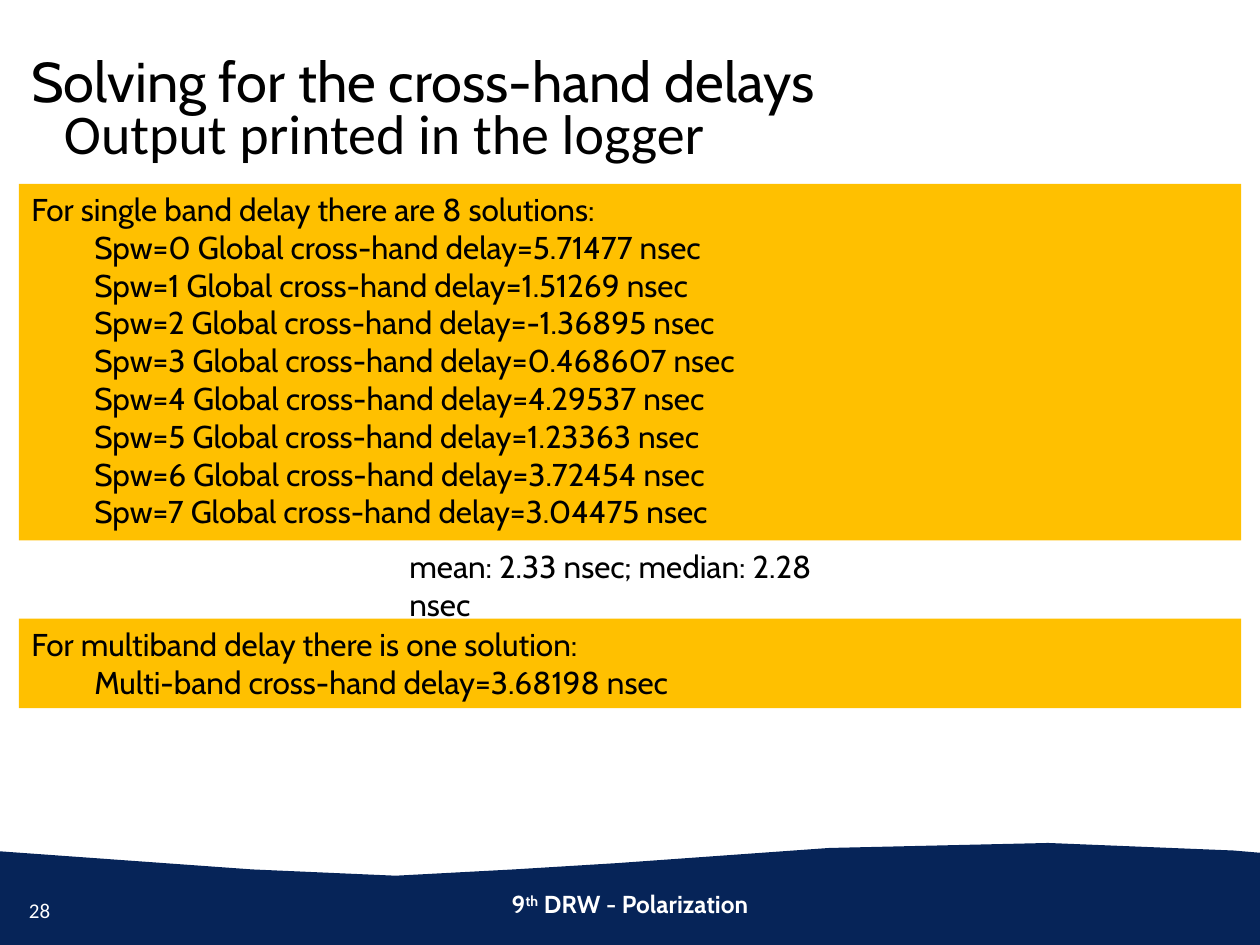
from pptx import Presentation
from pptx.dml.color import RGBColor
from pptx.enum.shapes import MSO_SHAPE
from pptx.enum.text import MSO_ANCHOR, PP_ALIGN
from pptx.util import Inches, Pt

NAVY = RGBColor(0x06, 0x24, 0x58)
AMBER = RGBColor(0xFF, 0xC0, 0x00)
BLACK = RGBColor(0, 0, 0)
WHITE = RGBColor(0xFF, 0xFF, 0xFF)

WAVE = [(-0.09, 6.75), (2, 6.9), (3.14, 6.95), (4.08, 6.9), (4.9, 6.85),
        (6.58, 6.73), (8.32, 6.69), (9.79, 6.75), (10.14, 6.78),
        (10.13, 7.6), (-0.07, 7.58)]
DELAYS = ["5.71477", "1.51269", "-1.36895", "0.468607",
          "4.29537", "1.23363", "3.72454", "3.04475"]


def add_run(paragraph, text, *, size=18, font="Cabin", color=BLACK,
            bold=False, superscript=False):
    run = paragraph.add_run()
    run.text = text
    run.font.size = Pt(size)
    run.font.name = font
    run.font.color.rgb = color
    run.font.bold = bold
    if superscript:
        run.font._element.set("baseline", "30000")


def add_text(slide, text, left, top, width, height, *, wrap=True, margin=None,
             **text_format):
    box = slide.shapes.add_textbox(Inches(left), Inches(top),
                                   Inches(width), Inches(height))
    frame = box.text_frame
    frame.word_wrap = wrap
    if margin is not None:
        frame.margin_left = frame.margin_right = Inches(margin)
        frame.margin_top = frame.margin_bottom = Inches(margin)
    add_run(frame.paragraphs[0], text, **text_format)
    return frame.paragraphs[0]


def fill_plain(shape, color):
    shape.shadow.inherit = False
    shape.fill.solid()
    shape.fill.fore_color.rgb = color
    shape.line.fill.background()


def add_wave(slide):
    builder = slide.shapes.build_freeform(
        Inches(WAVE[0][0]), Inches(WAVE[0][1]))
    builder.add_line_segments([(Inches(x), Inches(y)) for x, y in WAVE[1:]])
    fill_plain(builder.convert_to_shape(), NAVY)


def add_panel(slide, heading, results, top, height):
    """Amber panel: a heading with indented result lines."""
    panel = slide.shapes.add_shape(MSO_SHAPE.RECTANGLE, Inches(0.15),
                                   Inches(top), Inches(9.7), Inches(height))
    fill_plain(panel, AMBER)
    frame = panel.text_frame
    frame.word_wrap = True
    frame.vertical_anchor = MSO_ANCHOR.TOP
    add_run(frame.paragraphs[0], heading)
    for result in results:
        paragraph = frame.add_paragraph()
        paragraph._p.get_or_add_pPr().set("marL", str(Inches(0.5)))
        add_run(paragraph, result)
    for paragraph in frame.paragraphs:
        paragraph.alignment = PP_ALIGN.LEFT


def main():
    presentation = Presentation()
    presentation.slide_width = Inches(10)
    presentation.slide_height = Inches(7.5)
    slide = presentation.slides.add_slide(presentation.slide_layouts[6])

    # Footer
    add_wave(slide)
    add_text(slide, "28", 0.23, 7.12, 4.12, 0.24, margin=0,
             size=12, font="Calibri", color=WHITE)
    footer_format = dict(size=14, color=WHITE, bold=True)
    footer = add_text(slide, "9", 2.99, 7.01, 4.02, 0.42, **footer_format)
    footer.alignment = PP_ALIGN.CENTER
    add_run(footer, "th", superscript=True, **footer_format)
    add_run(footer, " DRW - Polarization", **footer_format)

    # Titles
    add_text(slide, "Solving for the cross-hand delays",
             0.15, 0.32, 9.7, 0.52, size=32)
    add_text(slide, "Output printed in the logger",
             0.41, 0.73, 9.44, 0.68, size=32, font="Calibri")

    # Logger output
    add_panel(slide, "For single band delay there are 8 solutions:",
              [f"Spw={window} Global cross-hand delay={delay} nsec"
               for window, delay in enumerate(DELAYS)], 1.46, 2.83)
    add_text(slide, "mean: 2.33 nsec; median: 2.28 nsec",
             3.15, 4.29, 3.71, 0.4)
    add_panel(slide, "For multiband delay there is one solution:",
              ["Multi-band cross-hand delay=3.68198 nsec"], 4.91, 0.71)

    presentation.save("out.pptx")


if __name__ == "__main__":
    main()
